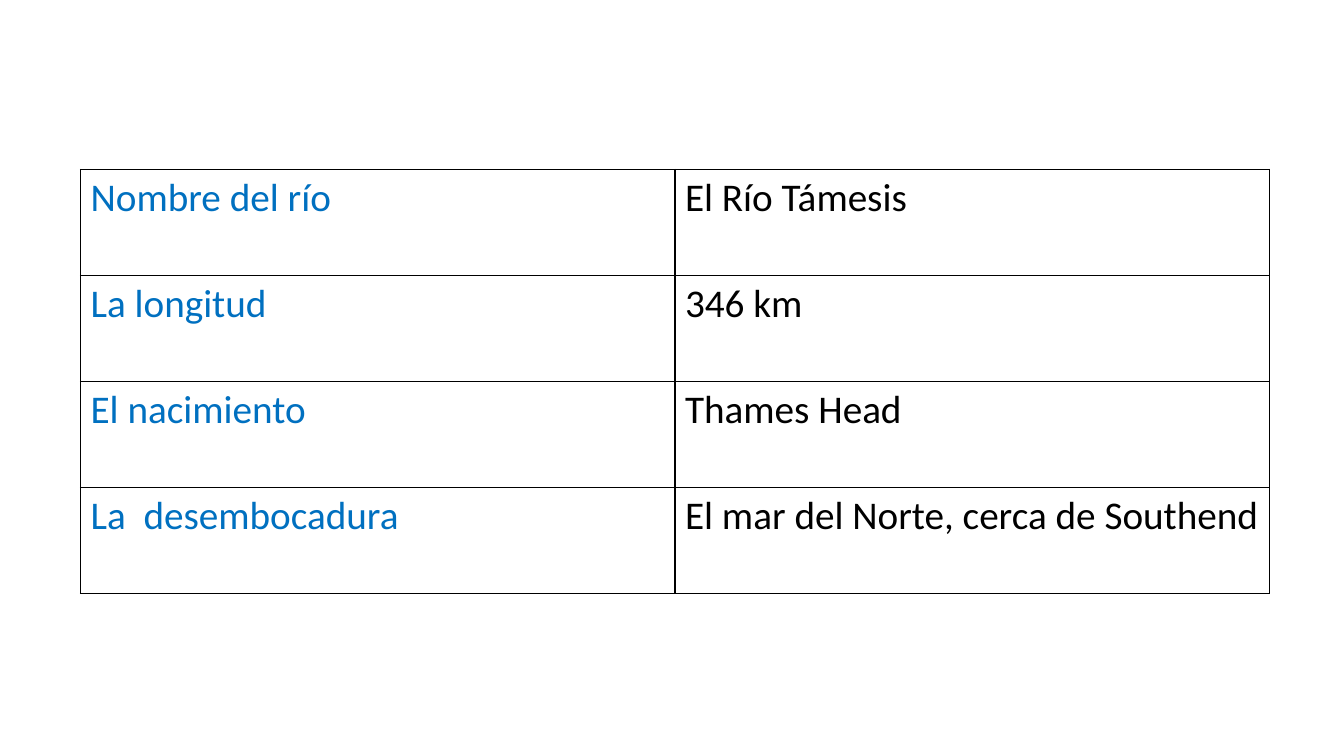
import pptx
import pptx.dml.color
import pptx.oxml.ns
import pptx.util
from lxml import etree

Cm = pptx.util.Cm
COLORS = {"label": "0070C0", "value": "000000", "border": "000000", "cell": "FFFFFF"}

RIVER_FACTS = [
    ("Nombre del río", "El Río Támesis"),
    ("La longitud", "346 km"),
    ("El nacimiento", "Thames Head"),
    ("La  desembocadura", "El mar del Norte, cerca de Southend"),
]
COLUMN_WIDTH = 14.98
ROW_HEIGHT = 2.67


def add_borders(cell):
    properties = cell._tc.get_or_add_tcPr()
    for side in ("lnL", "lnR", "lnT", "lnB"):
        line = etree.SubElement(properties, pptx.oxml.ns.qn(f"a:{side}"), w=str(pptx.util.Pt(1)))
        fill = etree.SubElement(line, pptx.oxml.ns.qn("a:solidFill"))
        etree.SubElement(fill, pptx.oxml.ns.qn("a:srgbClr"), val=COLORS["border"])


# Slide
deck = pptx.Presentation()
deck.slide_width, deck.slide_height = Cm(33.87), Cm(19.05)
slide = deck.slides.add_slide(deck.slide_layouts[6])

# River fact table
facts = slide.shapes.add_table(
    len(RIVER_FACTS), 2, Cm(2.03), Cm(4.27),
    Cm(2 * COLUMN_WIDTH), Cm(len(RIVER_FACTS) * ROW_HEIGHT),
).table
facts.first_row = False
facts.horz_banding = False
for column in facts.columns:
    column.width = Cm(COLUMN_WIDTH)
for row in facts.rows:
    row.height = Cm(ROW_HEIGHT)

# Labels on the left, values on the right
for row_index, fact in enumerate(RIVER_FACTS):
    for column_index, role in enumerate(("label", "value")):
        cell = facts.cell(row_index, column_index)
        add_borders(cell)
        cell.fill.solid()
        cell.fill.fore_color.rgb = pptx.dml.color.RGBColor.from_string(COLORS["cell"])
        run = cell.text_frame.paragraphs[0].add_run()
        run.text = fact[column_index]
        run.font.name = "Calibri"
        run.font.size = pptx.util.Pt(28)
        run.font.color.rgb = pptx.dml.color.RGBColor.from_string(COLORS[role])

deck.save("out.pptx")
